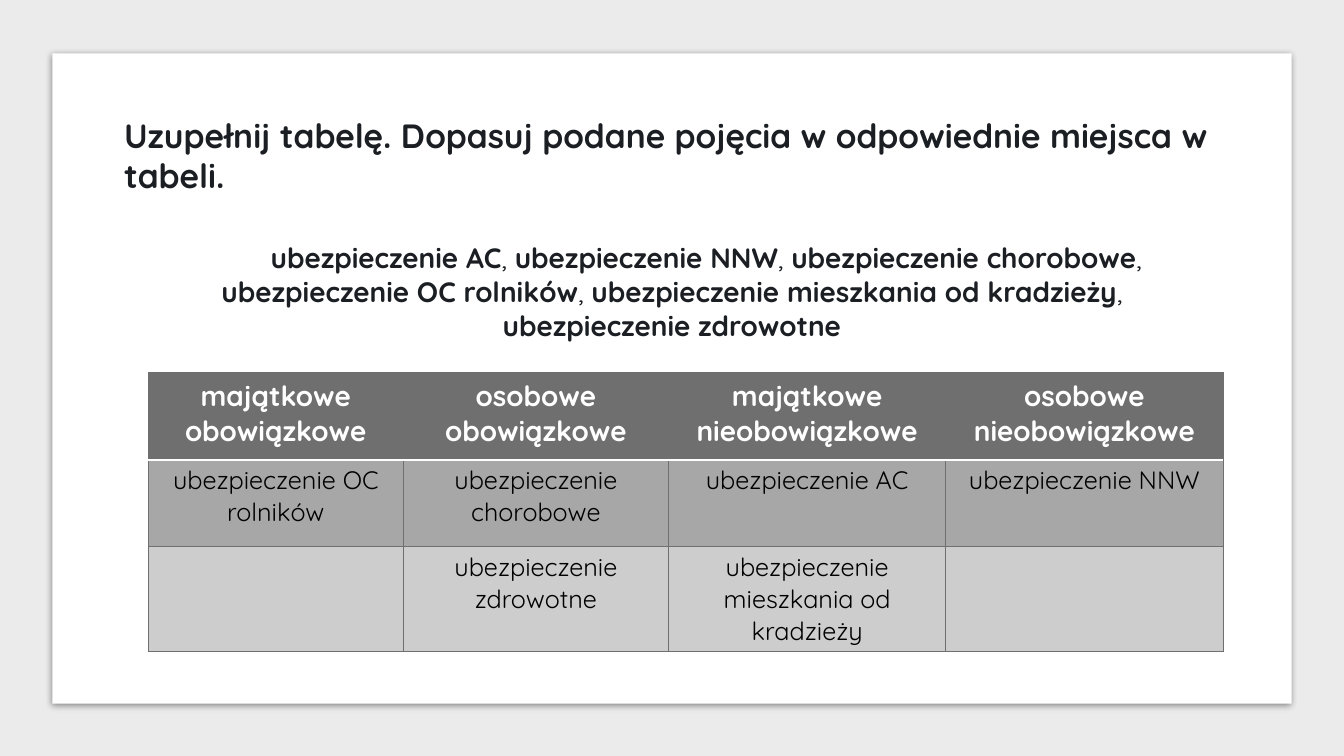
from dataclasses import dataclass
from lxml import etree
from pptx import Presentation
from pptx import util as u
from pptx.dml.color import RGBColor
from pptx.enum import shapes, text
from pptx.oxml import ns, parse_xml


@dataclass(frozen=True)
class Theme:
    """Hold the colours, font and type sizes."""
    font: str = "Quicksand"
    back: str = "363D46"
    frame: str = "EBEBEB"
    panel: str = "FFFFFF"
    ink: str = "1B1F23"
    cell: str = "000000"
    head: str = "6F6F6F"
    bands: tuple = ("A7A7A7", "CDCDCD")
    title: int = 24
    body: int = 20
    small: int = 18


T = Theme()
WIDE, HIGH = u.Inches(13.33), u.Inches(7.5)
TERMS = ["ubezpieczenie AC", "ubezpieczenie NNW", "ubezpieczenie chorobowe",
         "ubezpieczenie OC rolników", "ubezpieczenie mieszkania od kradzieży",
         "ubezpieczenie zdrowotne"]
ROWS = [["majątkowe obowiązkowe", "osobowe obowiązkowe",
         "majątkowe nieobowiązkowe", "osobowe nieobowiązkowe"],
        [TERMS[3], TERMS[2], TERMS[0], TERMS[1]],
        ["", TERMS[5], TERMS[4], ""]]
COLS, TALL = [2.53, 2.63, 2.75, 2.75], [0.86, 0.86, 1.02]


def area(x, y, w, h):
    """Turn percentages of the slide into a box."""
    return [round(WIDE * x / 100), round(HIGH * y / 100),
            round(WIDE * w / 100), round(HIGH * h / 100)]


def style(font, size, color, bold):
    """Format one font."""
    font.name, font.size, font.bold = T.font, u.Pt(size), bold
    font.color.rgb = RGBColor.from_string(color)


def place(slide, hold, box):
    """Move a placeholder into its box, in front of the panel."""
    hold.left, hold.top, hold.width, hold.height = box
    slide.shapes._spTree.append(hold._element)
    frame = hold.text_frame
    frame.word_wrap = True
    frame.auto_size = text.MSO_AUTO_SIZE.NONE
    frame.vertical_anchor = text.MSO_ANCHOR.TOP
    return frame


def plate(slide, box, color):
    """Draw a plain rectangle."""
    rect = slide.shapes.add_shape(shapes.MSO_SHAPE.RECTANGLE, *box)
    rect.shadow.inherit = False
    rect.fill.solid()
    rect.fill.fore_color.rgb = RGBColor.from_string(color)
    rect.line.fill.background()
    return rect


def shade(rect):
    """Give a shape a soft shadow below it."""
    glow = rect._element.spPr.find(ns.qn("a:effectLst"))
    glow.append(parse_xml(
        f'<a:outerShdw {ns.nsdecls("a")} blurRad="{u.Pt(5)}" dist="{u.Pt(1.4)}" '
        'dir="5400000" algn="t" rotWithShape="0"><a:srgbClr val="000000">'
        '<a:alpha val="43000"/></a:srgbClr></a:outerShdw>'))


def heading(slide, box):
    """Write the task in the title."""
    frame = place(slide, slide.shapes.title, box)
    frame.text = "Uzupełnij tabelę. Dopasuj podane pojęcia w odpowiednie miejsca w tabeli."
    para = frame.paragraphs[0]
    para.alignment = text.PP_ALIGN.LEFT
    style(para.runs[0].font, T.title, T.ink, True)


def terms(slide, box):
    """List the terms to be sorted, with an indented first line."""
    para = place(slide, slide.placeholders[1], box).paragraphs[0]
    para.alignment, para.space_before = text.PP_ALIGN.CENTER, u.Pt(0)
    props = para._p.get_or_add_pPr()
    props.set("marL", "0")
    props.set("indent", str(u.Inches(0.68)))
    etree.SubElement(props, ns.qn("a:buNone"))
    for i, term in enumerate(TERMS):
        for words, bold in ((", ", False), (term, True))[i == 0:]:
            run = para.add_run()
            run.text = words
            style(run.font, T.body, T.ink, bold)


def edge(cell, side, color, width):
    """Draw one border of a cell."""
    props = cell._tc.get_or_add_tcPr()
    props.append(parse_xml(
        f'<a:{side} {ns.nsdecls("a")} w="{u.Pt(width)}"><a:solidFill>'
        f'<a:srgbClr val="{color}"/></a:solidFill></a:{side}>'))


def entry(cell, words, row):
    """Fill, frame and format one cell."""
    first = row == 0
    for side in ("lnL", "lnR", "lnT", "lnB"):
        split = (row, side) in ((0, "lnB"), (1, "lnT"))
        edge(cell, side, *((T.panel, 1.47) if split else (T.head, 0.75)))
    cell.fill.solid()
    cell.fill.fore_color.rgb = RGBColor.from_string(
        T.head if first else T.bands[row - 1])
    cell.margin_left = cell.margin_right = u.Inches(0.18)
    cell.text = words
    para = cell.text_frame.paragraphs[0]
    para.alignment = text.PP_ALIGN.CENTER
    style(para.font, T.small, T.cell, False)
    for run in para.runs:
        style(run.font, T.body if first else T.small,
              T.panel if first else T.cell, first)


def grid(slide, box):
    """Build the table of insurance types."""
    table = slide.shapes.add_table(len(ROWS), len(COLS), *box).table
    for col, part in zip(table.columns, COLS):
        col.width = round(box[2] * part / sum(COLS))
    for row, part in zip(table.rows, TALL):
        row.height = round(box[3] * part / sum(TALL))
    for i, row in enumerate(ROWS):
        for j, words in enumerate(row):
            entry(table.cell(i, j), words, i)


def main():
    """Build and save the slide."""
    deck = Presentation()
    deck.slide_width, deck.slide_height = WIDE, HIGH
    slide = deck.slides.add_slide(deck.slide_layouts[1])
    fill = slide.background.fill
    fill.solid()
    fill.fore_color.rgb = RGBColor.from_string(T.back)
    plate(slide, area(0, 0, 100, 100), T.frame)
    shade(plate(slide, area(3.9, 7.07, 92.2, 86), T.panel))
    grid(slide, area(11.03, 49.33, 79.97, 36.6))
    heading(slide, area(8.48, 14.53, 83.04, 12.4))
    terms(slide, area(10.25, 31.2, 79.5, 14))
    deck.save("out.pptx")


if __name__ == "__main__":
    main()
